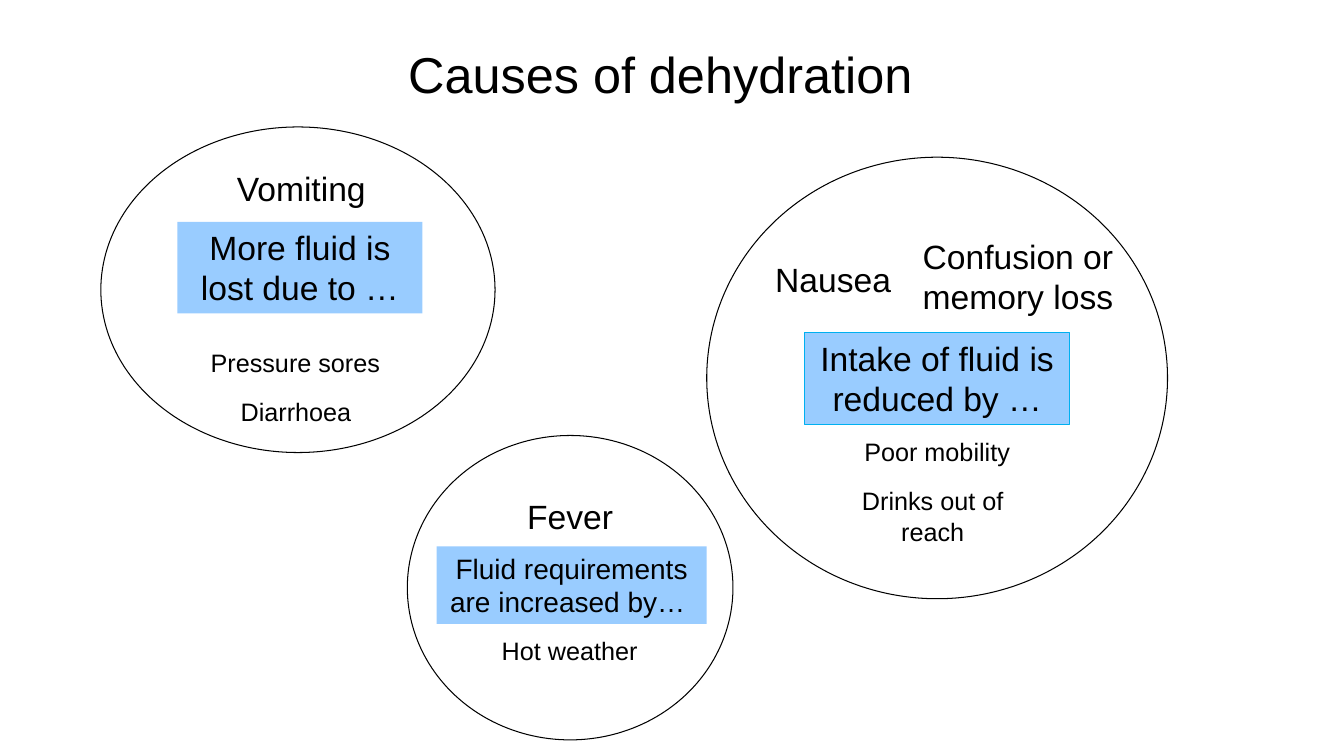
from pptx import Presentation
from pptx.dml.color import RGBColor
from pptx.enum import shapes, text
from pptx.util import Inches, Pt

BLACK = RGBColor(0x00, 0x00, 0x00)
PALE = RGBColor(0x99, 0xCC, 0xFF)
CYAN = RGBColor(0x00, 0xB0, 0xF0)
LEFT = text.PP_ALIGN.LEFT
MID = text.PP_ALIGN.CENTER
OVAL = shapes.MSO_SHAPE.OVAL
RECT = shapes.MSO_SHAPE.RECTANGLE

# Boxes are left, top, width, height in inches; those of the key phrase
# and the causes are measured from the corner of their circle.
GROUPS = [
    {"box": (1, 1.26, 3.91, 3.23),
     "key": ("More fluid is lost due to …", (0.76, 0.94, 2.43, 0.91), 24),
     "edge": None,
     "causes": [("Vomiting", (1.25, 0.36, 1.69, 0.51), 24, LEFT),
                ("Pressure sores", (0.53, 2.14, 2.8, 0.4), 18, MID),
                ("Diarrhoea ", (0.93, 2.62, 2.08, 0.4), 18, MID)]},
    {"box": (4.04, 4.32, 3.23, 3.02),
     "key": ("Fluid requirements are increased by… ",
             (0.29, 1.1, 2.68, 0.77), 20),
     "edge": None,
     "causes": [("Fever", (0.77, 0.55, 1.69, 0.51), 24, MID),
                (" Hot weather", (0.6, 1.93, 1.95, 0.4), 18, MID)]},
    {"box": (7.01, 1.56, 4.57, 4.38),
     "key": ("Intake of fluid is reduced by …", (0.97, 1.74, 2.63, 0.91), 24),
     "edge": CYAN,
     "causes": [("Nausea", (0.58, 0.96, 1.5, 0.51), 24, LEFT),
                ("Confusion or memory loss", (1.76, 0.73, 2.65, 0.91), 24, MID),
                ("Poor mobility", (1.37, 2.72, 1.83, 0.4), 18, MID),
                ("Drinks out of reach", (1.18, 3.21, 2.12, 0.71), 18, MID)]},
]


def shift(box, base):
    """Turn a box measured from the corner of base into a slide box."""
    return (base[0] + box[0], base[1] + box[1], box[2], box[3])


def write(shape, words, size, align=MID):
    frame = shape.text_frame
    frame.word_wrap = True
    frame.vertical_anchor = text.MSO_ANCHOR.TOP
    para = frame.paragraphs[0]
    para.alignment = align
    run = para.add_run()
    run.text = words
    for name, value in {"name": "Arial", "size": Pt(size)}.items():
        setattr(run.font, name, value)
    run.font.color.rgb = BLACK
    return frame


def label(slide, box, words, size, align=MID):
    area = slide.shapes.add_textbox(*map(Inches, box))
    return write(area, words, size, align)


def draw(slide, kind, box, fill=None, edge=None):
    shape = slide.shapes.add_shape(kind, *map(Inches, box))
    shape.shadow.inherit = False
    if fill is None:
        shape.fill.background()
    else:
        shape.fill.solid()
        shape.fill.fore_color.rgb = fill
    if edge is None:
        shape.line.fill.background()
    else:
        shape.line.color.rgb = edge
        shape.line.width = Pt(0.75)
    return shape


def title(slide, box, words):
    frame = label(slide, box, words, 36)
    frame.vertical_anchor = text.MSO_ANCHOR.MIDDLE
    frame.margin_bottom = Inches(0.57)
    frame.paragraphs[0].line_spacing = 0.9


def group(slide, box, key, edge, causes):
    """Draw a circle with its key phrase and the causes around it."""
    draw(slide, OVAL, box, edge=BLACK)
    words, place, size = key
    write(draw(slide, RECT, shift(place, box), PALE, edge), words, size)
    for words, place, size, align in causes:
        label(slide, shift(place, box), words, size, align)


def main():
    deck = Presentation()
    deck.slide_width, deck.slide_height = Inches(13.33), Inches(7.5)
    slide = deck.slides.add_slide(deck.slide_layouts[6])
    title(slide, (2.3, 0.32, 8.5, 1.42), "Causes of dehydration")
    for item in GROUPS:
        group(slide, **item)
    deck.save("out.pptx")


if __name__ == "__main__":
    main()
